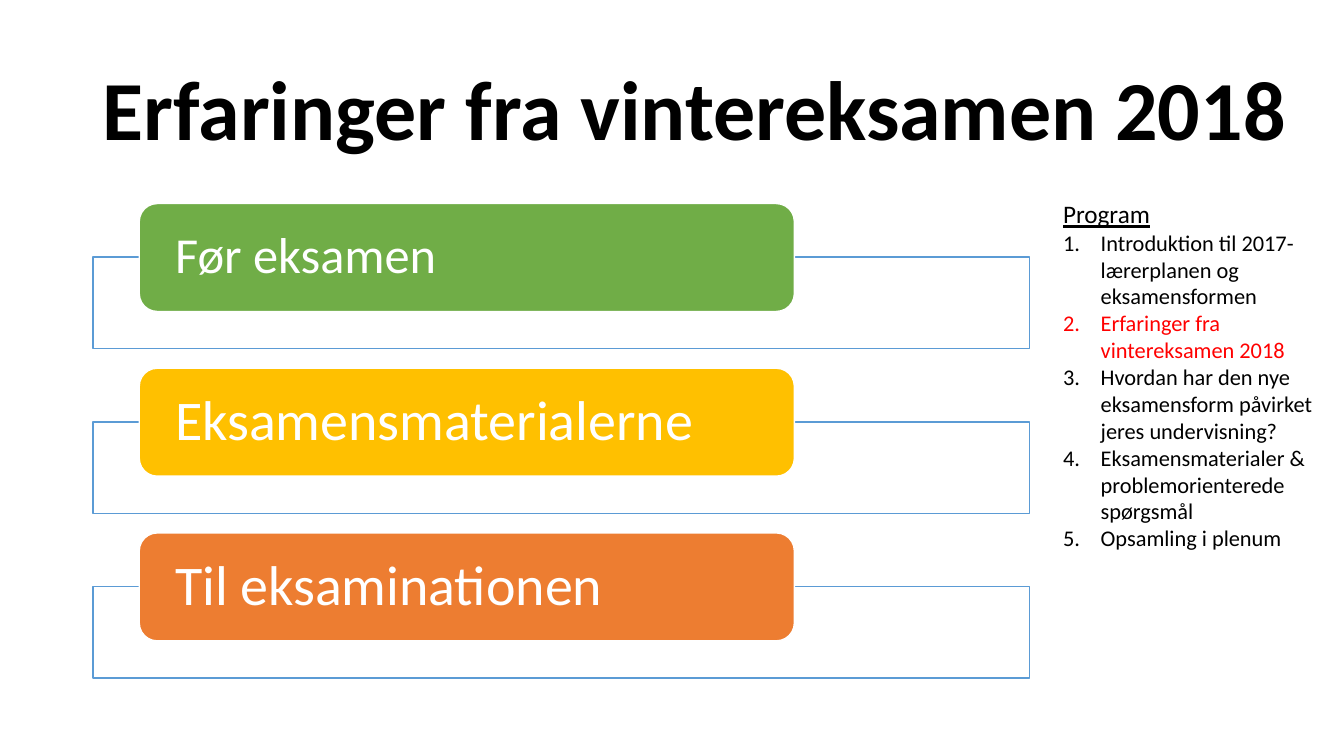
import pptx
import pptx.util
import pptx.dml.color
import pptx.enum.shapes
import pptx.enum.text
import pptx.oxml
import pptx.oxml.ns
from pptx.util import Cm

SHAPES = pptx.enum.shapes.MSO_SHAPE
ANCHORS = pptx.enum.text.MSO_ANCHOR


def rgb(value):
    return pptx.dml.color.RGBColor.from_string(value)


def child(parent, tag, **attributes):
    element = pptx.oxml.parse_xml(f"<{tag} {pptx.oxml.ns.nsdecls('a')}/>")
    for name, value in attributes.items():
        element.set(name, value)
    parent.append(element)


class SlideBuilder:
    font = "Calibri"
    outline = 1

    def __init__(self, slide):
        self.slide = slide

    def run(self, paragraph, words, size, color="000000", bold=False, underline=False):
        run = paragraph.add_run()
        run.text = words
        run.font.name = self.font
        run.font.size = pptx.util.Pt(size)
        run.font.bold = bold
        run.font.underline = underline
        run.font.color.rgb = rgb(color)

    def textbox(self, left, top, width, height):
        frame = self.slide.shapes.add_textbox(Cm(left), Cm(top), Cm(width), Cm(height)).text_frame
        frame.word_wrap = True
        return frame

    def title(self, words, box):
        frame = self.textbox(*box)
        frame.vertical_anchor = ANCHORS.MIDDLE
        frame.paragraphs[0].line_spacing = 0.9
        self.run(frame.paragraphs[0], words, 60, bold=True)

    def agenda(self, heading, items, current, box):
        frame = self.textbox(*box)
        frame.auto_size = pptx.enum.text.MSO_AUTO_SIZE.SHAPE_TO_FIT_TEXT
        self.run(frame.paragraphs[0], heading, 18, underline=True)
        for item in items:
            paragraph = frame.add_paragraph()
            properties = paragraph._p.get_or_add_pPr()
            indent = Cm(0.95)
            properties.set("marL", str(indent))
            properties.set("indent", str(-indent))
            child(properties, "a:buFont", typeface="+mj-lt")
            child(properties, "a:buAutoNum", type="arabicPeriod")
            self.run(paragraph, item, 16, "FF0000" if item == current else "000000")

    def block(self, kind, box, fill, line):
        shape = self.slide.shapes.add_shape(kind, *map(Cm, box))
        shape.shadow.inherit = False
        shape.fill.solid()
        shape.fill.fore_color.rgb = rgb(fill)
        shape.line.color.rgb = rgb(line)
        shape.line.width = pptx.util.Pt(self.outline)
        return shape

    def frame(self, box):
        panel = self.block(SHAPES.RECTANGLE, box, "FFFFFF", "5B9BD5")
        color = panel._element.spPr.find(pptx.oxml.ns.qn("a:solidFill"))[0]
        child(color, "a:alpha", val="90000")

    def tab(self, words, size, fill, box):
        text = self.block(SHAPES.ROUNDED_RECTANGLE, box, fill, "FFFFFF").text_frame
        text.word_wrap = True
        text.vertical_anchor = ANCHORS.MIDDLE
        text.margin_left = text.margin_right = Cm(0.77)
        text.margin_top = text.margin_bottom = 0
        paragraph = text.paragraphs[0]
        paragraph.alignment = pptx.enum.text.PP_ALIGN.LEFT
        paragraph.line_spacing = 0.9
        self.run(paragraph, words, size, "FFFFFF")


def main():
    presentation = pptx.Presentation()
    presentation.slide_width = Cm(33.87)
    presentation.slide_height = Cm(19.05)
    builder = SlideBuilder(presentation.slides.add_slide(presentation.slide_layouts[6]))

    topic = "Erfaringer fra vintereksamen 2018"
    builder.title(topic, (2.34, 1.02, 30.43, 3.68))
    program = [
        "Introduktion til 2017-lærerplanen og eksamensformen",
        topic,
        "Hvordan har den nye eksamensform påvirket jeres undervisning?",
        "Eksamensmaterialer & problemorienterede spørgsmål",
        "Opsamling i plenum",
    ]
    builder.agenda("Program", program, topic, (26.54, 4.88, 6.83, 9.91))

    phases = [
        ("Før eksamen", 36, "70AD47"),
        ("Eksamensmaterialerne", 40, "FFC000"),
        ("Til eksaminationen", 40, "ED7D31"),
    ]
    for index, (phase, size, fill) in enumerate(phases):
        offset = index * 4.15
        builder.frame((2.34, 6.48 + offset, 23.6, 2.31))
        builder.tab(phase, size, fill, (3.51, 5.13 + offset, 16.51, 2.72))

    presentation.save("out.pptx")


if __name__ == "__main__":
    main()
